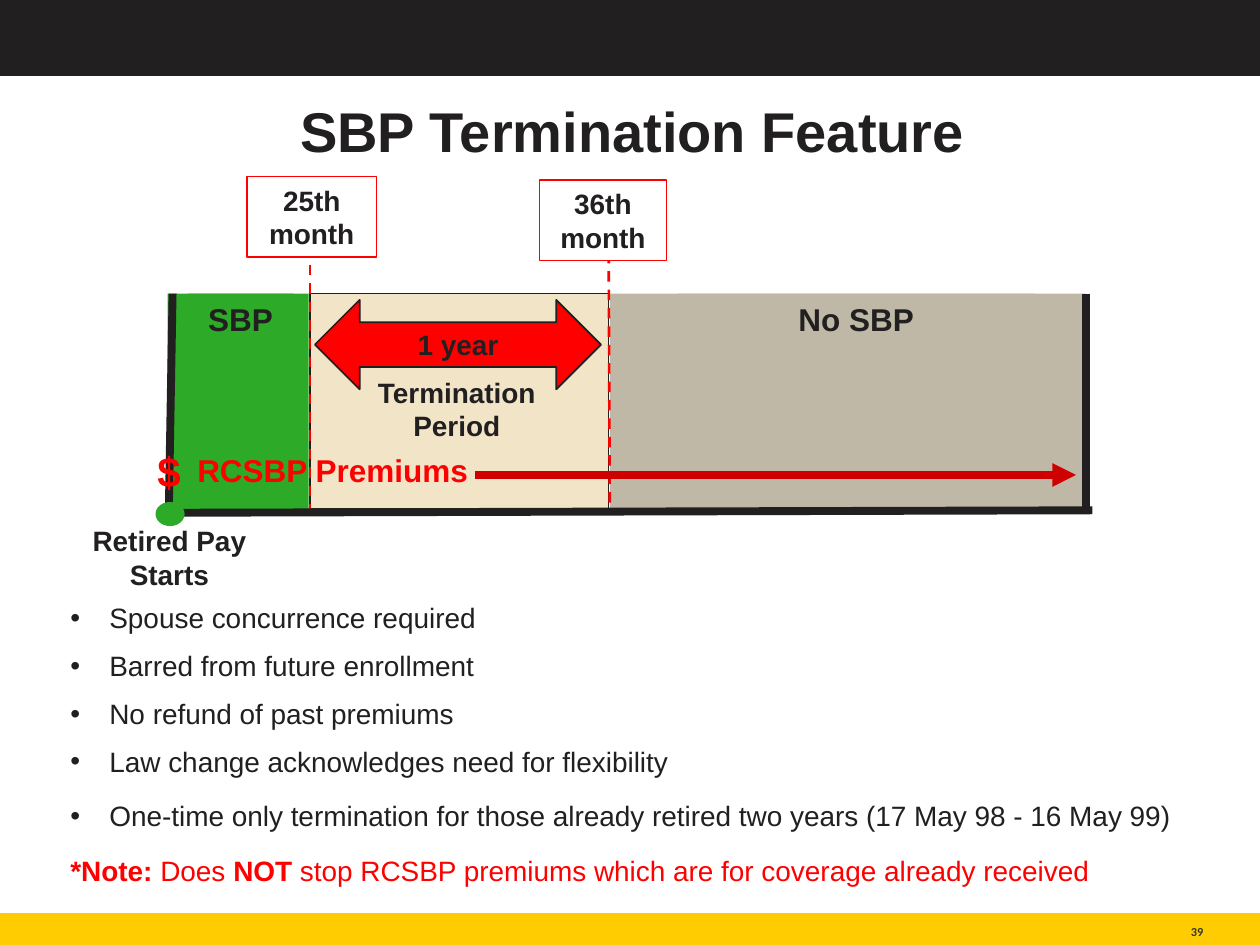
import lxml.etree
import pptx
import pptx.dml.color
import pptx.enum.dml
import pptx.enum.shapes
import pptx.enum.text
import pptx.oxml.ns
import pptx.util

Inches = pptx.util.Inches
Pt = pptx.util.Pt
RGBColor = pptx.dml.color.RGBColor
Shape = pptx.enum.shapes.MSO_SHAPE
Align = pptx.enum.text.PP_ALIGN
Anchor = pptx.enum.text.MSO_ANCHOR

INK = RGBColor(0x22, 0x1F, 0x20)
GOLD = RGBColor(0xFF, 0xCC, 0x01)
GREEN = RGBColor(0x2D, 0xAA, 0x27)
CREAM = RGBColor(0xF1, 0xE4, 0xC7)
TAUPE = RGBColor(0xBF, 0xB8, 0xA6)
RED = RGBColor(0xFF, 0x00, 0x00)
DARK_RED = RGBColor(0xCF, 0x00, 0x00)
GRAPHITE = RGBColor(0x2F, 0x37, 0x2F)
WHITE = RGBColor(0xFF, 0xFF, 0xFF)

CHART_TOP = 2.33
BASELINE = 4.07
BULLETS = [
    ("Spouse concurrence required", 0.9),
    ("Barred from future enrollment", 0.9),
    ("No refund of past premiums", 0.9),
    ("Law change acknowledges need for flexibility", 0.9),
    ("One-time only termination for those already retired two years (17 May 98 - 16 May 99)", 1.1),
]
NOTE = [
    ("*Note: ", True),
    ("Does ", False),
    ("NOT", True),
    (" stop RCSBP premiums which are for coverage already received", False),
]


class SlideBuilder:
    """Draw styled elements on the current slide."""

    def __init__(self, page):
        self.page = page
        self.style = {"name": "Arial", "size": Pt(16), "bold": True}

    def apply(self, target, values):
        for name, value in values.items():
            setattr(target, name, value)

    def span(self, para, text, color=INK, **changes):
        span = para.add_run()
        span.text = text
        self.apply(span.font, {**self.style, **changes})
        span.font.color.rgb = color

    def label(self, box, lines, color=INK, align=Align.CENTER, spacing=1.0,
              frame=None, **changes):
        text_frame = box.text_frame
        self.apply(text_frame, {"word_wrap": True, "vertical_anchor": Anchor.TOP, **(frame or {})})
        for index, line in enumerate(lines):
            para = text_frame.add_paragraph() if index else text_frame.paragraphs[0]
            self.apply(para, {"alignment": align, "line_spacing": spacing})
            self.span(para, line, color, **changes)

    def shape(self, kind, place, fill, line=None, width=1):
        shape = self.page.shapes.add_shape(kind, *map(Inches, place))
        shape.shadow.inherit = False
        shape.fill.solid()
        shape.fill.fore_color.rgb = fill
        if line is None:
            shape.line.fill.background()
        else:
            shape.line.color.rgb = line
            shape.line.width = Pt(width)
        return shape

    def text(self, place, lines, **options):
        box = self.page.shapes.add_textbox(*map(Inches, place))
        self.label(box, lines, **options)

    def line(self, start, end, color=INK, width=4.5, dashed=False, arrow=False):
        line = self.page.shapes.add_connector(
            pptx.enum.shapes.MSO_CONNECTOR.STRAIGHT, *map(Inches, start + end))
        line.line.color.rgb = color
        line.line.width = Pt(width)
        if dashed:
            line.line.dash_style = pptx.enum.dml.MSO_LINE.DASH
        properties = line._element.spPr
        if arrow:
            outline = properties.find(pptx.oxml.ns.qn("a:ln"))
            lxml.etree.SubElement(outline, pptx.oxml.ns.qn("a:tailEnd"), type="triangle")
        lxml.etree.SubElement(properties, pptx.oxml.ns.qn("a:effectLst"))

    def bullets(self, place, items, note):
        text_frame = self.page.shapes.add_textbox(*map(Inches, place)).text_frame
        text_frame.word_wrap = True
        for index, (item, spacing) in enumerate(items):
            para = text_frame.add_paragraph() if index else text_frame.paragraphs[0]
            properties = para._p.get_or_add_pPr()
            properties.set("marL", str(Inches(0.31)))
            properties.set("indent", str(-Inches(0.31)))
            lxml.etree.SubElement(properties, pptx.oxml.ns.qn("a:buFont"), typeface="Arial")
            lxml.etree.SubElement(properties, pptx.oxml.ns.qn("a:buChar"), char="•")
            self.apply(para, {"line_spacing": spacing, "space_before": Pt(10 if index else 0)})
            self.span(para, item, bold=False)
        para = text_frame.add_paragraph()
        self.apply(para, {"line_spacing": 1.1, "space_before": Pt(10)})
        for text, bold in note:
            self.span(para, text, RED, bold=bold)


def main():
    deck = pptx.Presentation()
    deck.slide_width, deck.slide_height = Inches(10), Inches(7.5)
    builder = SlideBuilder(deck.slides.add_slide(deck.slide_layouts[6]))
    middle = {"vertical_anchor": Anchor.MIDDLE}

    builder.shape(Shape.RECTANGLE, (0, 0.01, 10, 0.59), INK, INK)
    builder.shape(Shape.RECTANGLE, (0, 7.25, 10, 0.27), GOLD, GOLD)
    margins = dict.fromkeys(("margin_left", "margin_top", "margin_right", "margin_bottom"), 0)
    builder.text((8.68, 7.25, 0.87, 0.2), ["39"], color=GRAPHITE, align=Align.RIGHT,
                 frame={**margins, "word_wrap": False, "vertical_anchor": Anchor.BOTTOM},
                 name="Calibri", size=Pt(7))
    builder.text((0.71, 0.58, 8.62, 0.97), ["SBP Termination Feature"], spacing=0.9,
                 frame=middle, size=Pt(32))
    builder.bullets((0.46, 4.75, 9.08, 2.41), BULLETS, NOTE)

    builder.shape(Shape.RECTANGLE, (4.84, CHART_TOP, 3.78, 1.72), TAUPE)
    no_cover = builder.shape(Shape.RECTANGLE, (5.38, CHART_TOP, 2.83, 0.4), TAUPE)
    builder.label(no_cover, ["No SBP"], size=Pt(18))
    builder.shape(Shape.RECTANGLE, (2.46, CHART_TOP, 2.37, 1.71), CREAM, INK, 0.75)
    builder.shape(Shape.RECTANGLE, (1.33, CHART_TOP, 1.12, 1.74), GREEN)
    cover = builder.shape(Shape.RECTANGLE, (1.49, CHART_TOP, 0.84, 0.25), GREEN)
    builder.label(cover, ["SBP"], size=Pt(18))

    builder.line((1.37, CHART_TOP), (1.34, 4.06))
    builder.line((2.46, 1.81), (2.46, BASELINE), RED, 1.5, dashed=True)
    builder.line((4.83, 1.86), (4.84, BASELINE), RED, 1.5, dashed=True)
    for month, place in (("25th month", (1.96, 1.4, 1.03, 0.64)),
                         ("36th month", (4.28, 1.43, 1.01, 0.64))):
        marker = builder.shape(Shape.RECTANGLE, place, WHITE, RED, 0.75)
        builder.label(marker, [month], frame=middle)
    year = builder.shape(Shape.LEFT_RIGHT_ARROW, (2.5, 2.38, 2.27, 0.71), RED, INK)
    builder.label(year, ["1 year"], frame=middle)
    builder.line((8.62, CHART_TOP), (8.62, 4.05))
    builder.line((8.67, 4.05), (1.33, BASELINE))

    builder.text((2.87, 2.93, 1.51, 0.64), ["Termination Period"])
    builder.shape(Shape.OVAL, (1.25, 4, 0.2, 0.16), GREEN, GREEN, 2.25)
    builder.text((0.51, 4.11, 1.67, 0.64), ["Retired Pay", "Starts"])
    builder.text((1.15, 3.49, 0.39, 0.51), ["$"], color=RED, align=Align.LEFT,
                 frame={"word_wrap": False}, size=Pt(24))
    builder.text((1.4, 3.53, 2.48, 0.4), ["RCSBP Premiums"], color=RED, size=Pt(18))
    builder.line((3.77, 3.77), (8.54, 3.77), DARK_RED, arrow=True)

    deck.save("out.pptx")


if __name__ == "__main__":
    main()
